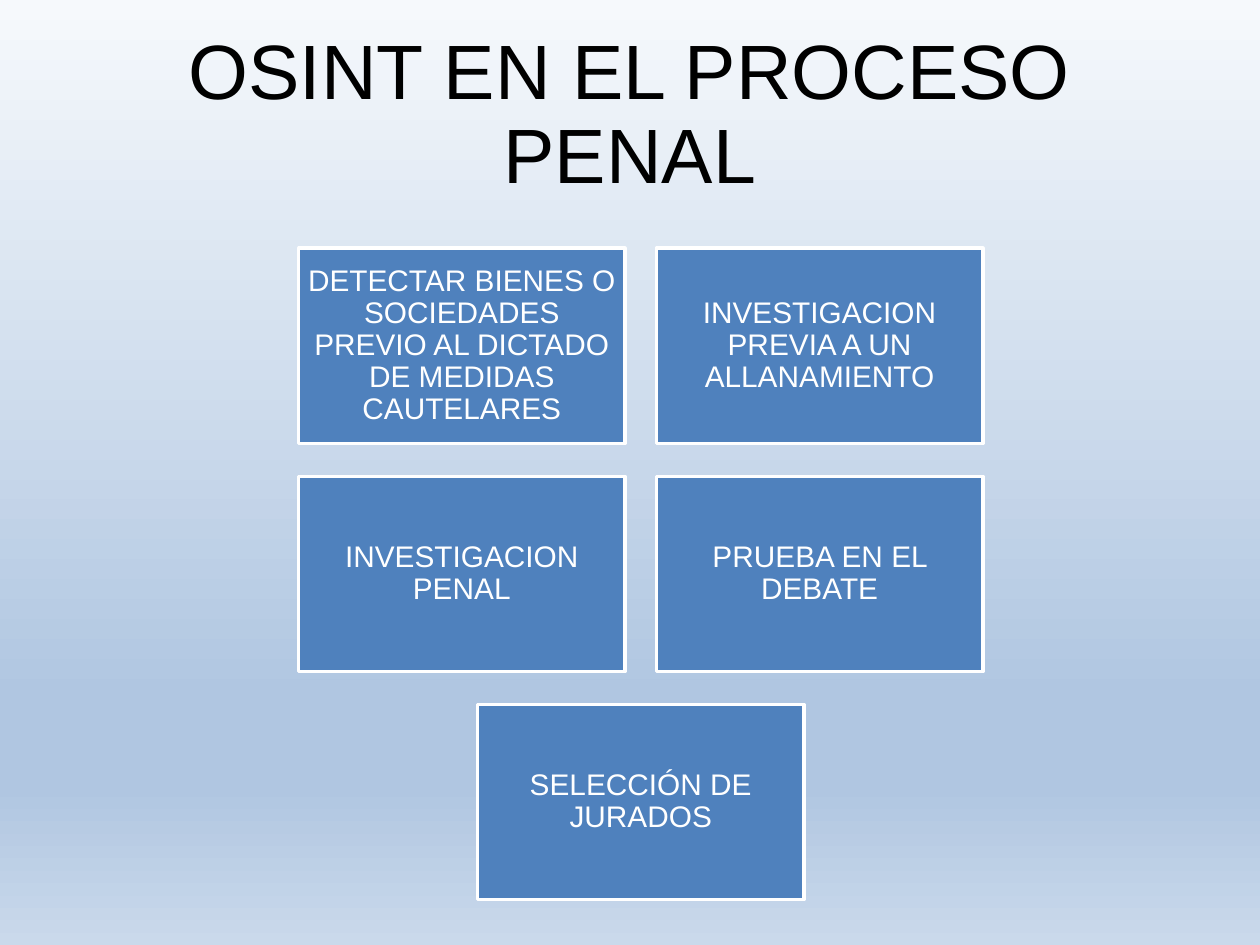
from dataclasses import dataclass

import pptx
import pptx.dml.color
import pptx.enum.shapes
import pptx.enum.text
import pptx.oxml
import pptx.oxml.ns
import pptx.util
from pptx.util import Inches

COLORS = {"title": "000000", "box": "4F81BD", "white": "FFFFFF"}
BACKGROUND_STOPS = [(0, "F6F9FC"), (74, "B0C6E1"), (83, "B0C6E1"), (100, "CAD9EB")]
FONT = "Arial"

# Box grid, in inches
BOX_WIDTH, BOX_HEIGHT = 2.59, 1.55
COLUMN_STEP, ROW_STEP = 2.84, 1.81
GRID_LEFT, GRID_TOP = 2.37, 1.97


@dataclass
class Box:
    text: str
    column: float
    row: int


BOXES = [
    Box("DETECTAR BIENES O SOCIEDADES PREVIO AL DICTADO DE MEDIDAS CAUTELARES", 0, 0),
    Box("INVESTIGACION PREVIA A UN ALLANAMIENTO", 1, 0),
    Box("INVESTIGACION PENAL", 0, 1),
    Box("PRUEBA EN EL DEBATE", 1, 1),
    Box("SELECCIÓN DE JURADOS", 0.5, 2),  # centred under both columns
]


def rgb(name: str) -> pptx.dml.color.RGBColor:
    return pptx.dml.color.RGBColor.from_string(COLORS[name])


def set_text(shape, text: str, size: float, color: str, margin: float) -> None:
    frame = shape.text_frame
    frame.text = text
    frame.word_wrap = True
    frame.vertical_anchor = pptx.enum.text.MSO_ANCHOR.MIDDLE
    frame.margin_left = frame.margin_right = Inches(margin)
    frame.margin_top = frame.margin_bottom = Inches(margin)
    paragraph = frame.paragraphs[0]
    paragraph.alignment = pptx.enum.text.PP_ALIGN.CENTER
    paragraph.line_spacing = 0.9
    paragraph.font.name = FONT
    paragraph.font.size = pptx.util.Pt(size)
    paragraph.font.color.rgb = rgb(color)


def set_background(slide) -> None:
    fill = slide.background.fill
    fill.gradient()
    fill.gradient_angle = 270
    stop_list = slide.element.find(".//" + pptx.oxml.ns.qn("a:gsLst"))
    for stop in list(stop_list):
        stop_list.remove(stop)
    for position, color in BACKGROUND_STOPS:
        stop_list.append(pptx.oxml.parse_xml(
            f'<a:gs {pptx.oxml.ns.nsdecls("a")} pos="{position * 1000}">'
            f'<a:srgbClr val="{color}"/></a:gs>'))


def add_box(slide, box: Box) -> None:
    shape = slide.shapes.add_shape(
        pptx.enum.shapes.MSO_SHAPE.RECTANGLE,
        Inches(GRID_LEFT + box.column * COLUMN_STEP),
        Inches(GRID_TOP + box.row * ROW_STEP),
        Inches(BOX_WIDTH), Inches(BOX_HEIGHT))
    shape.shadow.inherit = False
    shape.fill.solid()
    shape.fill.fore_color.rgb = rgb("box")
    shape.line.color.rgb = rgb("white")
    shape.line.width = pptx.util.Pt(2)
    set_text(shape, box.text, 17, "white", 0.07)


def main() -> None:
    presentation = pptx.Presentation()
    presentation.slide_width, presentation.slide_height = Inches(10), Inches(7.5)
    slide = presentation.slides.add_slide(presentation.slide_layouts[5])
    set_background(slide)

    # Title
    title = slide.shapes.title
    title.left, title.top = Inches(0.5), Inches(0.26)
    title.width, title.height = Inches(9), Inches(1.33)
    set_text(title, "OSINT EN EL PROCESO PENAL", 44, "title", 0)
    title.text_frame.auto_size = pptx.enum.text.MSO_AUTO_SIZE.SHAPE_TO_FIT_TEXT

    # Uses of OSINT
    for box in BOXES:
        add_box(slide, box)

    presentation.save("out.pptx")


if __name__ == "__main__":
    main()
